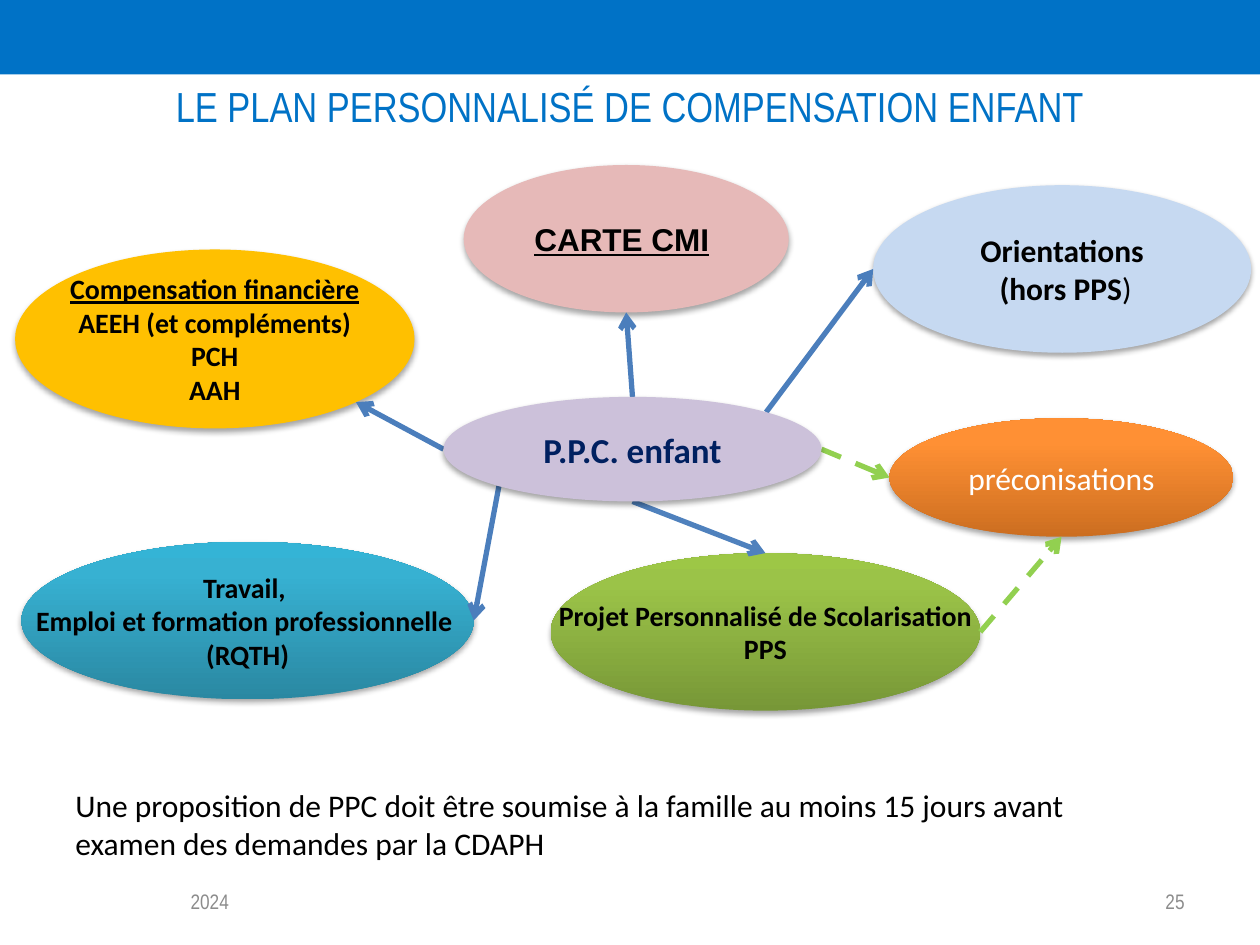
from copy import deepcopy

from lxml import etree
from pptx import Presentation
from pptx.dml.color import RGBColor
from pptx.enum.dml import MSO_LINE
from pptx.enum.shapes import MSO_CONNECTOR, MSO_SHAPE
from pptx.enum.text import MSO_ANCHOR, PP_ALIGN
from pptx.oxml.ns import qn
from pptx.util import Emu, Pt

PX = 9144  # 100 px to the inch
OVAL, RECT = MSO_SHAPE.OVAL, MSO_SHAPE.RECTANGLE
LINE, DASH = MSO_CONNECTOR.STRAIGHT, MSO_LINE.DASH
TOP, MID = MSO_ANCHOR.TOP, MSO_ANCHOR.MIDDLE
LEFT, MIDST, RIGHT = PP_ALIGN.LEFT, PP_ALIGN.CENTER, PP_ALIGN.RIGHT
BLUE = "0072C6"

# Unit offsets from an oval's centre to its edge
DIAG = 0.707
SIDES = {"n": (0, -1), "s": (0, 1), "w": (-1, 0), "e": (1, 0),
         "ne": (DIAG, -DIAG), "sw": (-DIAG, DIAG), "se": (DIAG, DIAG)}

BOLD = dict(name="Calibri", size=16, bold=True, color="000000")
BIG = dict(BOLD, size=18)
UNDER = dict(underline=True)

# Ovals: box in the map, fill (or gradient from the bottom up), wrap, format, lines
OVALS = {
    "orient": ((693, 16, 300, 133), "C6D9F1", False, BIG,
               [[("Orientations", {})],
                [(" (hors PPS", {}), (")", dict(bold=False))]]),
    "money": ((12, 67, 317, 142), "FFC000", False, BOLD,
              [[("Compensation financière", UNDER)], [("AEEH (et compléments)", {})],
               [("PCH", {})], [("AAH", {})]]),
    "school": ((437, 308, 341, 125), ("779737", "9BC348", "9DC746"), False, BOLD,
               [[("Projet Personnalisé de Scolarisation", {})], [("PPS", {})]]),
    "card": ((368, 0, 258, 117), "E6B9B8", True, dict(BIG, name="Arial"),
             [[("CARTE CMI", UNDER), (" ", {})]]),
    "advice": ((706, 201, 273, 94), ("CC6E20", "FF9034", "FF9136"), True,
               dict(BIG, bold=False, color="FFFFFF"), [[("préconisations", {})]]),
    "work": ((17, 299, 359, 125), ("2A88A2", "37B1D2", "34B4D6"), False, BOLD,
             [[("Travail, ", {})], [("Emploi et formation professionnelle ", {})],
              [("(RQTH)", {})]]),
    "plan": ((352, 184, 300, 83), "CCC1DA", False,
             dict(BOLD, size=20, color="002060"), [[("P.P.C. enfant", {})]]),
}

# Arrows: start oval and side, end oval and side, colour, dashed
ARROWS = [
    ("plan", "n", "card", "s", "4B7EBC", False),
    ("plan", "ne", "orient", "w", "4B7EBC", False),
    ("plan", "s", "school", "n", "4F81BD", False),
    ("plan", "w", "money", "se", "4B7EBC", False),
    ("plan", "e", "advice", "w", "92D050", True),
    ("school", "e", "advice", "s", "92D050", True),
    ("plan", "sw", "work", "e", "4B7EBC", False),
]


def rgb(code):
    return RGBColor.from_string(code)


def place(box, part):
    """Turn a part relative to a box into EMU."""
    x, y, w, h = part
    return [Emu(v * PX) for v in (box[0] + x, box[1] + y, w, h)]


def write(frame, lines, style, align, anchor, wrap=True):
    frame.word_wrap, frame.vertical_anchor = wrap, anchor
    for i, line in enumerate(lines):
        para = frame.paragraphs[0] if i == 0 else frame.add_paragraph()
        para.alignment = align
        for text, extra in line:
            run = para.add_run()
            run.text = text
            for key, value in {**style, **extra}.items():
                if key == "color":
                    run.font.color.rgb = rgb(value)
                else:
                    setattr(run.font, key, Pt(value) if key == "size" else value)


def label(slide, box, part, text, style, align, anchor):
    area = slide.shapes.add_textbox(*place(box, part))
    write(area.text_frame, [[(text, {})]], style, align, anchor)


def paint(fill, color):
    if isinstance(color, str):
        fill.solid()
        fill.fore_color.rgb = rgb(color)
        return
    fill.gradient()
    fill.gradient_angle = 90
    first = fill._fill._gradFill.find(qn("a:gsLst"))[0]
    first.addnext(deepcopy(first))
    for stop, code, pos in zip(fill.gradient_stops, color, (0, 0.8, 1)):
        stop.color.rgb = rgb(code)
        stop.position = pos


def shade(shape):
    """Soft shadow straight below a shape."""
    shape.shadow.inherit = False
    effects = shape._element.spPr.find(qn("a:effectLst"))
    outer = etree.SubElement(effects, qn("a:outerShdw"), blurRad="40000",
                             dist="23000", dir="5400000", rotWithShape="0")
    black = etree.SubElement(outer, qn("a:srgbClr"), val="000000")
    etree.SubElement(black, qn("a:alpha"), val="35000")


def oval(slide, box, name):
    part, color, wrap, style, lines = OVALS[name]
    shape = slide.shapes.add_shape(OVAL, *place(box, part))
    paint(shape.fill, color)
    shape.line.fill.background()
    shade(shape)
    write(shape.text_frame, lines, style, MIDST, MID, wrap)


def site(box, name, side):
    x, y, w, h = place(box, OVALS[name][0])
    dx, dy = SIDES[side]
    return Emu(round(x + w * (1 + dx) / 2)), Emu(round(y + h * (1 + dy) / 2))


def arrow(slide, box, start, out, end, side, color, dashed):
    link = slide.shapes.add_connector(LINE, *site(box, start, out),
                                      *site(box, end, side))
    link.line.color.rgb = rgb(color)
    link.line.width = Pt(3)
    if dashed:
        link.line.dash_style = DASH
    etree.SubElement(link.line._get_or_add_ln(), qn("a:tailEnd"), type="arrow")
    etree.SubElement(link._element.spPr, qn("a:effectLst"))


def header(slide, box):
    band = slide.shapes.add_shape(RECT, *place(box, (0, 0, box[2], 59)))
    paint(band.fill, BLUE)
    band.line.fill.background()
    band.shadow.inherit = False
    label(slide, box, (50, 59, 900, 87),
          "LE PLAN PERSONNALISÉ DE COMPENSATION ENFANT",
          dict(name="Arial Narrow", size=24, color=BLUE), MIDST, TOP)


def chart(slide, box):
    """Ovals around the plan; the plan itself lies over the arrows."""
    for name in OVALS:
        if name != "plan":
            oval(slide, box, name)
    for item in ARROWS:
        arrow(slide, box, *item)
    oval(slide, box, "plan")


def footer(slide, box):
    label(slide, box, (0, 0, 875, 71),
          "Une proposition de PPC doit être soumise à la famille au moins "
          "15 jours avant examen des demandes par la CDAPH",
          dict(BIG, bold=False), LEFT, TOP)
    small = dict(name="Arial Narrow", size=12, color="8C8C8C")
    label(slide, box, (0, 76, 233, 40), "2024", small, MIDST, MID)
    label(slide, box, (box[2] - 233, 76, 233, 40), "25", small, RIGHT, MID)


def main():
    deck = Presentation()
    deck.slide_width, deck.slide_height = Emu(1000 * PX), Emu(750 * PX)
    slide = deck.slides.add_slide(deck.slide_layouts[6])
    header(slide, (0, 0, 1000, 131))
    chart(slide, (0, 131, 1000, 433))
    footer(slide, (50, 619, 900, 116))
    deck.save("out.pptx")


if __name__ == "__main__":
    main()
